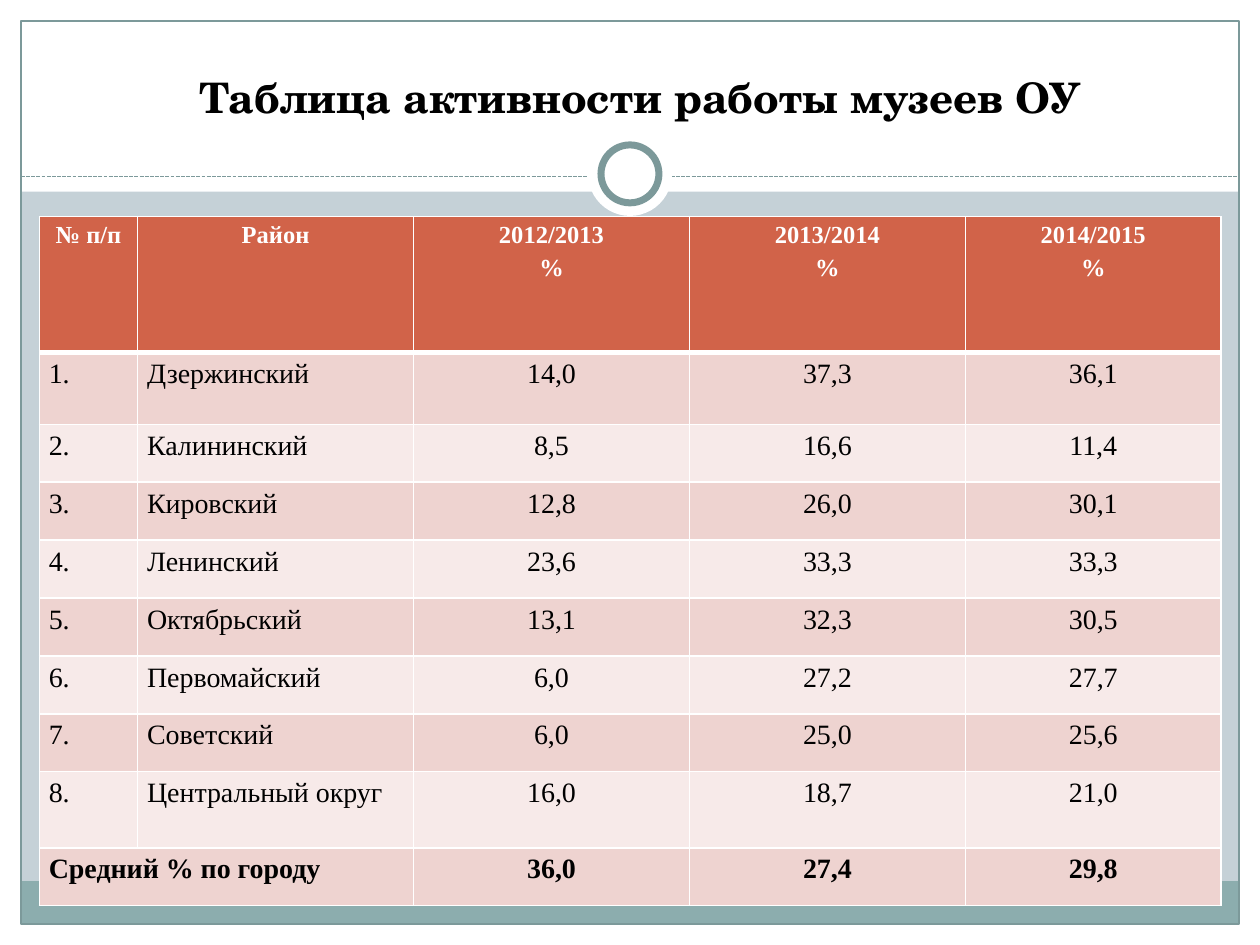
from lxml.etree import fromstring
from pptx import Presentation
from pptx.dml.color import RGBColor
from pptx.enum.dml import MSO_LINE
from pptx.enum.shapes import MSO_CONNECTOR, MSO_SHAPE
from pptx.enum.text import MSO_ANCHOR, PP_ALIGN
from pptx.oxml import parse_xml
from pptx.oxml.ns import nsdecls, qn
from pptx.util import Pt

WIDE, HIGH, EDGE = 720, 540, 12
WHITE, TEAL = "FFFFFF", "7C999A"
BANDS = "F7EAE9", "EED3D0"
COLS = [56.16, 157.68, 157.68, 157.68, 146.16]
ROWS = [77.7, 41] + [33.1] * 6 + [43.5, 33.1]
HEAD = ["№ п/п", "Район", "2012/2013\n%", "2013/2014\n%", "2014/2015\n%"]
AREAS = [
    ("Дзержинский", "14,0", "37,3", "36,1"),
    ("Калининский", "8,5", "16,6", "11,4"),
    ("Кировский", "12,8", "26,0", "30,1"),
    ("Ленинский", "23,6", "33,3", "33,3"),
    ("Октябрьский", "13,1", "32,3", "30,5"),
    ("Первомайский", "6,0", "27,2", "27,7"),
    ("Советский", "6,0", "25,0", "25,6"),
    ("Центральный округ", "16,0", "18,7", "21,0"),
]
TOTAL = ["Средний % по городу", "", "36,0", "27,4", "29,8"]


def paint(form, color):
    """Give a fill or line format a solid colour."""
    form.solid()
    form.fore_color.rgb = RGBColor.from_string(color)


def style(para, align, **font):
    """Apply alignment and font values to a paragraph."""
    para.alignment = align
    color = font.pop("color")
    for key, value in font.items():
        setattr(para.font, key, value)
    para.font.color.rgb = RGBColor.from_string(color)


def add_form(slide, kind, box, fill=None, line=None, width=0.75):
    """Add a flat preset shape in the given box."""
    shape = slide.shapes.add_shape(kind, *map(Pt, box))
    shape.shadow.inherit = False
    if fill:
        paint(shape.fill, fill)
    else:
        shape.fill.background()
    if line:
        paint(shape.line.fill, line)
        shape.line.width = Pt(width)
    else:
        shape.line.fill.background()


def add_ring(slide, x, y, size):
    """Add a white disc with a teal ring inside, centred on a point."""
    for span, line in ((size, None), (size * 0.69, TEAL)):
        box = x - span / 2, y - span / 2, span, span
        add_form(slide, MSO_SHAPE.OVAL, box, WHITE, line, 4)


def add_frame(slide, wide, high, edge):
    """Add the white margins, bottom bar, border, rule and ring."""
    top, foot, rule = 109.5, 24.5, 100.8
    inner = wide - 2 * edge
    for box, fill, line in (
        ((0, high - edge, wide, edge), WHITE, None),
        ((0, 0, wide, top), WHITE, None),
        ((0, 0, edge, high), WHITE, None),
        ((wide - edge, 0, edge, high), WHITE, None),
        ((edge, high - edge - foot, inner, foot), "8CADAE", None),
        ((edge, edge, inner, high - 2 * edge), None, TEAL),
    ):
        add_form(slide, MSO_SHAPE.RECTANGLE, box, fill, line)
    ends = map(Pt, (edge, rule, wide - edge, rule))
    dash = slide.shapes.add_connector(MSO_CONNECTOR.STRAIGHT, *ends)
    paint(dash.line.fill, TEAL)
    dash.line.width = Pt(0.75)
    dash.line.dash_style = MSO_LINE.SQUARE_DOT
    props = dash.element.find(qn("p:spPr"))
    props.append(parse_xml(f"<a:effectLst {nsdecls('a')}/>"))
    add_ring(slide, wide / 2, 99.4, 48)


def add_title(slide, text, box):
    """Place the title placeholder in front of the frame."""
    title = slide.shapes.title
    slide.shapes.element.append(title.element)
    title.left, title.top, title.width, title.height = map(Pt, box)
    frame = title.text_frame
    frame.text = text
    frame.word_wrap = True
    frame.vertical_anchor = MSO_ANCHOR.MIDDLE
    style(frame.paragraphs[0], PP_ALIGN.CENTER, name="TeX Gyre Schola",
          size=Pt(24), bold=True, color="000000")


def add_edges(cell, top, bottom):
    """Draw white borders round a cell, with the given top and bottom widths."""
    props = cell._tc.get_or_add_tcPr()
    widths = {"lnL": 1, "lnR": 1, "lnT": top, "lnB": bottom}
    for i, (tag, width) in enumerate(widths.items()):
        props.insert(i, fromstring(
            f'<a:{tag} {nsdecls("a")} w="{Pt(width)}"><a:solidFill>'
            f'<a:srgbClr val="{WHITE}"/></a:solidFill></a:{tag}>'))


def add_cell(cell, text, row, col):
    """Fill one cell according to its row and column."""
    head, last = row == 0, row == len(ROWS) - 1
    cell.margin_left = cell.margin_right = Pt(5.4)
    cell.margin_top = cell.margin_bottom = 0
    paint(cell.fill, "D16349" if head else BANDS[row % 2])
    add_edges(cell, 3 if row == 1 else 1, 3 if head else 1)
    cell.text = text
    align = PP_ALIGN.CENTER if head or col > 1 else PP_ALIGN.JUSTIFY
    for para in cell.text_frame.paragraphs:
        para.line_spacing = 1.2
        style(para, align, name="Times New Roman", size=Pt(14 if head else 16),
              bold=head or last, color=WHITE if head else "000000")


def add_scores(slide, left, top):
    """Add the table of districts with its top left corner at a point."""
    data = [HEAD]
    data += [(f"{i}.", *area) for i, area in enumerate(AREAS, 1)]
    data.append(TOTAL)
    box = map(Pt, (left, top, sum(COLS), sum(ROWS)))
    table = slide.shapes.add_table(len(ROWS), len(COLS), *box).table
    for col, width in zip(table.columns, COLS):
        col.width = Pt(width)
    for i, (height, texts) in enumerate(zip(ROWS, data)):
        table.rows[i].height = Pt(height)
        for j, text in enumerate(texts):
            add_cell(table.cell(i, j), text, i, j)
    end = len(ROWS) - 1
    table.cell(end, 0).merge(table.cell(end, 1))


def main():
    """Build and save the slide."""
    deck = Presentation()
    deck.slide_width, deck.slide_height = Pt(WIDE), Pt(HIGH)
    slide = deck.slides.add_slide(deck.slide_layouts[5])
    paint(slide.background.fill, "C5D1D7")
    add_frame(slide, WIDE, HIGH, EDGE)
    add_scores(slide, 22.5, 123.8)
    add_title(slide, "Таблица активности работы музеев ОУ", (90, 37, 551.5, 36))
    deck.save("out.pptx")


if __name__ == "__main__":
    main()
